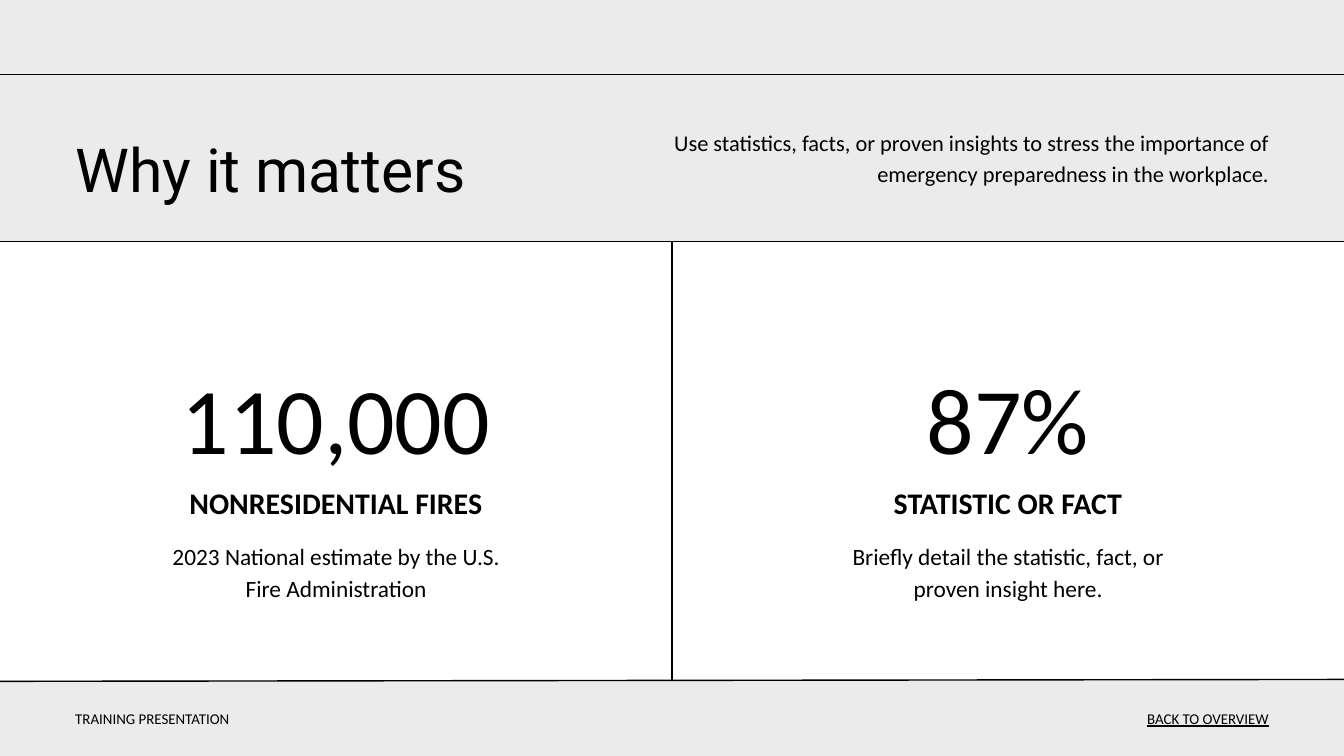
from dataclasses import dataclass

from lxml.etree import SubElement
from pptx import Presentation
from pptx.dml.color import RGBColor
from pptx.enum.shapes import MSO_CONNECTOR as CONN, MSO_SHAPE as SHAPE
from pptx.enum.text import MSO_AUTO_SIZE as FIT, PP_ALIGN as AL
from pptx.oxml.ns import qn
from pptx.util import Inches, Pt


@dataclass(frozen=True)
class Theme:
    back: RGBColor = RGBColor(0xEB, 0xEB, 0xEB)
    panel: RGBColor = RGBColor(0xFF, 0xFF, 0xFF)
    ink: RGBColor = RGBColor(0, 0, 0)
    head_font: str = "Roboto"
    body_font: str = "Calibri"
    title: float = 65
    figure: float = 100.6
    label: float = 32
    detail: float = 25
    intro: float = 24
    footer: float = 16
    rule: float = 1.5


@dataclass(frozen=True)
class Box:
    x: float
    y: float
    w: float
    h: float

    def inner(self, x, y, w, h):
        return Box(self.x + x, self.y + y, w, h)

    def centred(self, y, w, h):
        return self.inner((self.w - w) / 2, y, w, h)

    def emu(self):
        return [Inches(v) for v in (self.x, self.y, self.w, self.h)]


# The grid has one column and one row to the inch.
COLS, ROWS = 20, 11.25
MARGIN = 1.12
HEADER = Box(0, 1.11, COLS, 2.48)
FOOTER = Box(0, 10.12, COLS, ROWS - 10.12)
PANEL_W, PANEL_H = COLS / 2, 6.53
OVERHANG = 0.47
THEME = Theme()
STATS = [
    ("110,000", 9.36, "NONRESIDENTIAL FIRES",
     "2023 National estimate by the U.S. Fire Administration"),
    ("87%", 5.37, "STATISTIC OR FACT",
     "Briefly detail the statistic, fact, or proven insight here."),
]


def add_text(s, box, text, size, font=THEME.body_font, align=AL.LEFT,
             spacing=1.2, bold=False, underline=False):
    tf = s.shapes.add_textbox(*box.emu()).text_frame
    tf.word_wrap = True
    tf.auto_size = FIT.SHAPE_TO_FIT_TEXT
    tf.margin_left = tf.margin_right = tf.margin_top = tf.margin_bottom = 0
    p = tf.paragraphs[0]
    p.alignment, p.line_spacing = align, spacing
    r = p.add_run()
    r.text = text
    r.font.name, r.font.size = font, Pt(size)
    r.font.bold, r.font.underline = bold, underline
    r.font.color.rgb = THEME.ink


def add_rule(s, x1, y1, x2, y2):
    line = s.shapes.add_connector(
        CONN.STRAIGHT, *(Inches(v) for v in (x1, y1, x2, y2)))
    line.line.color.rgb = THEME.ink
    line.line.width = Pt(THEME.rule)
    SubElement(line._element.spPr, qn("a:effectLst"))


def add_panel(s, box):
    sp = s.shapes.add_shape(SHAPE.RECTANGLE, *box.emu())
    sp.shadow.inherit = False
    sp.fill.solid()
    sp.fill.fore_color.rgb = THEME.panel
    sp.line.fill.background()


def add_stat(s, box, figure, figure_w, label, detail):
    add_text(s, box.centred(1.1, figure_w, 1.69), figure, THEME.figure,
             align=AL.CENTER, spacing=1.4)
    add_text(s, box.centred(3.51, 5.37, 0.61), label, THEME.label,
             align=AL.CENTER, bold=True)
    add_text(s, box.centred(4.41, 5.37, 0.9), detail, THEME.detail,
             align=AL.CENTER, spacing=1.15)


def add_header(s, box):
    bottom = box.y + box.h
    add_rule(s, box.x, box.y, box.w, box.y)
    add_rule(s, box.w + OVERHANG, bottom, box.x, bottom)
    add_text(s, box.inner(MARGIN, 0.63, 7.56, 1.09), "Why it matters",
             THEME.title, font=THEME.head_font)
    add_text(s, box.inner(box.w / 2, 0.75, box.w / 2 - MARGIN, 0.87),
             "Use statistics, facts, or proven insights to stress the "
             "importance of emergency preparedness in the workplace.",
             THEME.intro, align=AL.RIGHT, spacing=1.15)


def add_footer(s, box):
    """Draws the slightly rising rule and the two captions under it."""
    add_rule(s, box.x - OVERHANG, box.y + 0.02,
             box.w + OVERHANG, box.y - 0.01)
    add_text(s, box.inner(MARGIN, 0.33, 4.34, 0.35), "TRAINING PRESENTATION",
             THEME.footer, spacing=1.4)
    add_text(s, box.inner(box.w - MARGIN - 2.99, 0.33, 2.99, 0.35),
             "BACK TO OVERVIEW", THEME.footer, align=AL.RIGHT, spacing=1.4,
             underline=True)


def main():
    prs = Presentation()
    prs.slide_width, prs.slide_height = Inches(COLS), Inches(ROWS)
    s = prs.slides.add_slide(prs.slide_layouts[6])
    s.background.fill.solid()
    s.background.fill.fore_color.rgb = THEME.back

    top = HEADER.y + HEADER.h
    panels = [Box(i * PANEL_W, top, PANEL_W, PANEL_H)
              for i in range(len(STATS))]
    for box in panels:
        add_panel(s, box)
    add_rule(s, PANEL_W, FOOTER.y, PANEL_W, top)
    add_header(s, HEADER)
    add_footer(s, FOOTER)
    for box, stat in zip(panels, STATS):
        add_stat(s, box, *stat)
    prs.save("out.pptx")


if __name__ == "__main__":
    main()
